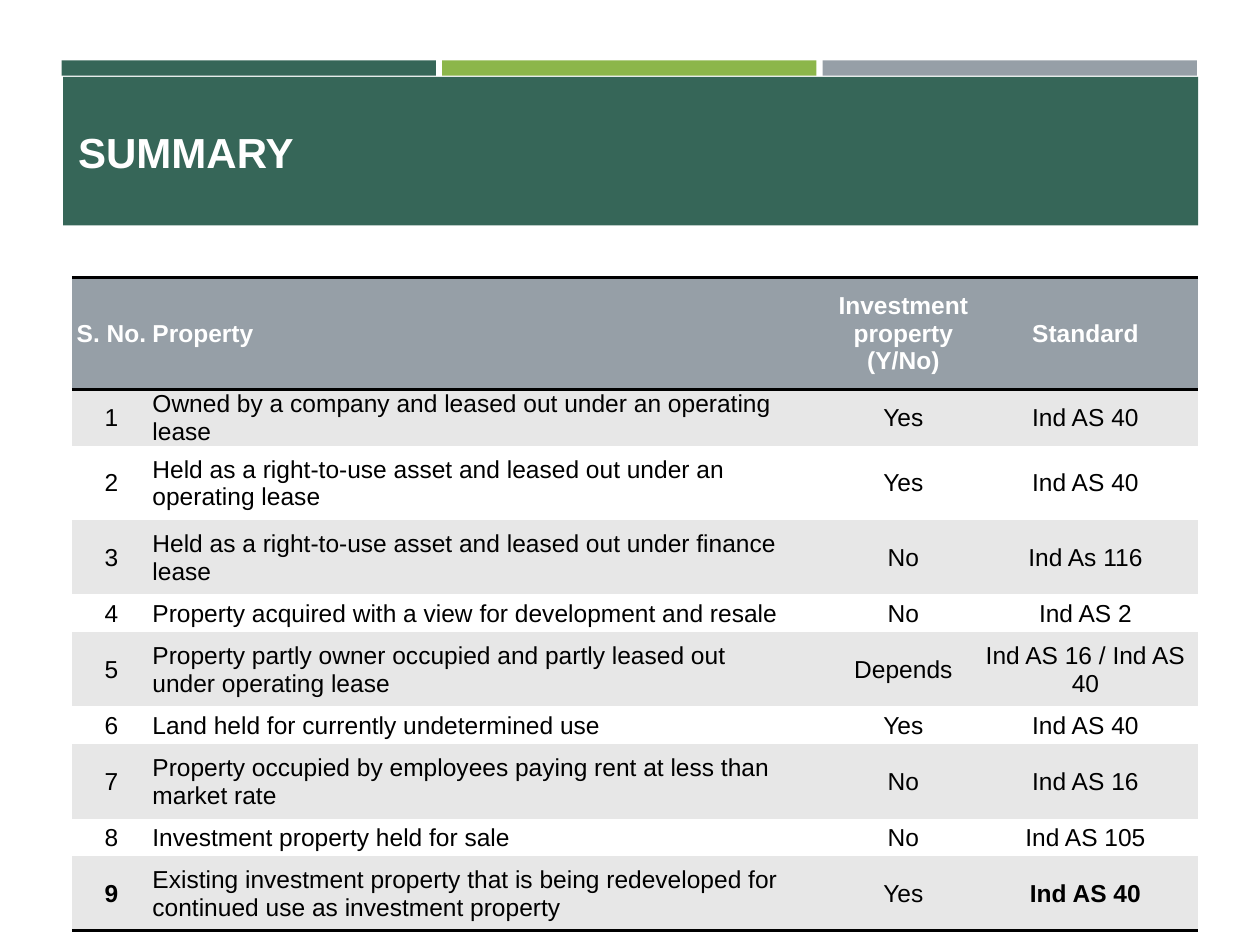
from lxml import etree
from pptx import Presentation
from pptx.dml.color import RGBColor
from pptx.enum.shapes import MSO_SHAPE
from pptx.enum.text import MSO_ANCHOR, MSO_AUTO_SIZE, PP_ALIGN
from pptx.oxml.ns import qn
from pptx.util import Inches, Pt

COLORS = {
    "green": "366658", "lime": "8CB64A", "gray": "969FA7",
    "band": "E7E7E7", "white": "FFFFFF", "black": "000000",
}
FONT = "Arial"
NO_STYLE = "{2D5ABB26-0587-4C30-8999-92F81FD0307C}"

TITLE = "SUMMARY"
HEADER = ("S. No.", "Property", "Investment property\v(Y/No)", "Standard")
PROPERTIES = [
    ("Owned by a company and leased out under an operating lease", "Yes", "Ind AS 40"),
    ("Held as a right-to-use asset and leased out under an\voperating lease", "Yes", "Ind AS 40"),
    ("Held as a right-to-use asset and leased out under finance\vlease", "No", "Ind As 116"),
    ("Property acquired with a view for development and resale", "No", "Ind AS 2"),
    ("Property partly owner occupied and partly leased out\vunder operating lease",
     "Depends", "Ind AS 16 / Ind AS 40"),
    ("Land held for currently undetermined use", "Yes", "Ind AS 40"),
    ("Property occupied by employees paying rent at less than\vmarket rate", "No", "Ind AS 16"),
    ("Investment property held for sale", "No", "Ind AS 105"),
    ("Existing investment property that is being redeveloped for\vcontinued use as investment property",
     "Yes", "Ind AS 40"),
]
COLUMN_WIDTHS = (0.63, 5.42, 1.1, 1.79)
HEADER_HEIGHT, LINE_HEIGHT, TWO_LINE_HEIGHT = 0.89, 0.3, 0.59


def color(name):
    return RGBColor.from_string(COLORS[name])


def add_block(slide, left, top, width, height, fill):
    shape = slide.shapes.add_shape(
        MSO_SHAPE.RECTANGLE, Inches(left), Inches(top), Inches(width), Inches(height))
    shape.shadow.inherit = False
    shape.fill.solid()
    shape.fill.fore_color.rgb = color(fill)
    shape.line.fill.background()


def format_runs(paragraph, size, font_color, bold):
    for run in paragraph.runs:
        run.font.name = FONT
        run.font.size = Pt(size)
        run.font.bold = bold
        run.font.color.rgb = color(font_color)


def add_title(slide):
    title = slide.shapes.title
    title.left, title.top = Inches(0.52), Inches(0.65)
    title.width, title.height = Inches(6.79), Inches(1.1)
    slide.shapes._spTree.append(title._element)  # bring in front of the band
    frame = title.text_frame
    frame.text = TITLE
    frame.auto_size = MSO_AUTO_SIZE.NONE
    frame.vertical_anchor = MSO_ANCHOR.MIDDLE
    frame.paragraphs[0].alignment = PP_ALIGN.LEFT
    format_runs(frame.paragraphs[0], 24, "white", True)


def add_rules(cell, sides):
    """Draw 2 pt black borders; sides are in schema order, such as lnT, lnB."""
    properties = cell._tc.get_or_add_tcPr()
    for position, side in enumerate(sides):
        line = etree.Element(qn(f"a:{side}"), w=str(Pt(2)))
        fill = etree.SubElement(line, qn("a:solidFill"))
        etree.SubElement(fill, qn("a:srgbClr"), val=COLORS["black"])
        properties.insert(position, line)


def add_summary_table(slide):
    rows = [HEADER] + [(str(number), *entry) for number, entry in enumerate(PROPERTIES, 1)]
    last = len(rows) - 1
    heights = [HEADER_HEIGHT] + [
        TWO_LINE_HEIGHT if "\v" in entry[0] else LINE_HEIGHT for entry in PROPERTIES]
    table = slide.shapes.add_table(
        len(rows), len(HEADER), Inches(0.57), Inches(2.2),
        Inches(sum(COLUMN_WIDTHS)), Inches(sum(heights))).table
    table._tbl.tblPr.find(qn("a:tableStyleId")).text = NO_STYLE
    for column, width in zip(table.columns, COLUMN_WIDTHS):
        column.width = Inches(width)

    for row_index, row in enumerate(rows):
        table.rows[row_index].height = Inches(heights[row_index])
        is_header = row_index == 0
        fill = "gray" if is_header else "band" if row_index % 2 else "white"
        for column_index, text in enumerate(row):
            cell = table.cell(row_index, column_index)
            cell.text_frame.text = text
            cell.vertical_anchor = MSO_ANCHOR.MIDDLE
            cell.margin_left = cell.margin_right = cell.margin_top = Inches(0.01)
            cell.margin_bottom = 0
            cell.fill.solid()
            cell.fill.fore_color.rgb = color(fill)
            paragraph = cell.text_frame.paragraphs[0]
            paragraph.alignment = PP_ALIGN.LEFT if column_index == 1 else PP_ALIGN.CENTER
            bold = is_header or (row_index == last and column_index in (0, 3))
            format_runs(paragraph, 14, "white" if is_header else "black", bold)
            if is_header:
                add_rules(cell, ("lnT", "lnB"))
            elif row_index == last:
                add_rules(cell, ("lnB",))


def main():
    presentation = Presentation()
    presentation.slide_width, presentation.slide_height = Inches(10), Inches(7.5)
    slide = presentation.slides.add_slide(presentation.slide_layouts[5])
    for index, fill in enumerate(("green", "lime", "gray")):
        add_block(slide, 0.49 + index * 3.02, 0.48, 2.97, 0.12, fill)
    add_block(slide, 0.5, 0.61, 9.01, 1.18, "green")
    add_title(slide)
    add_summary_table(slide)
    presentation.save("out.pptx")


if __name__ == "__main__":
    main()
